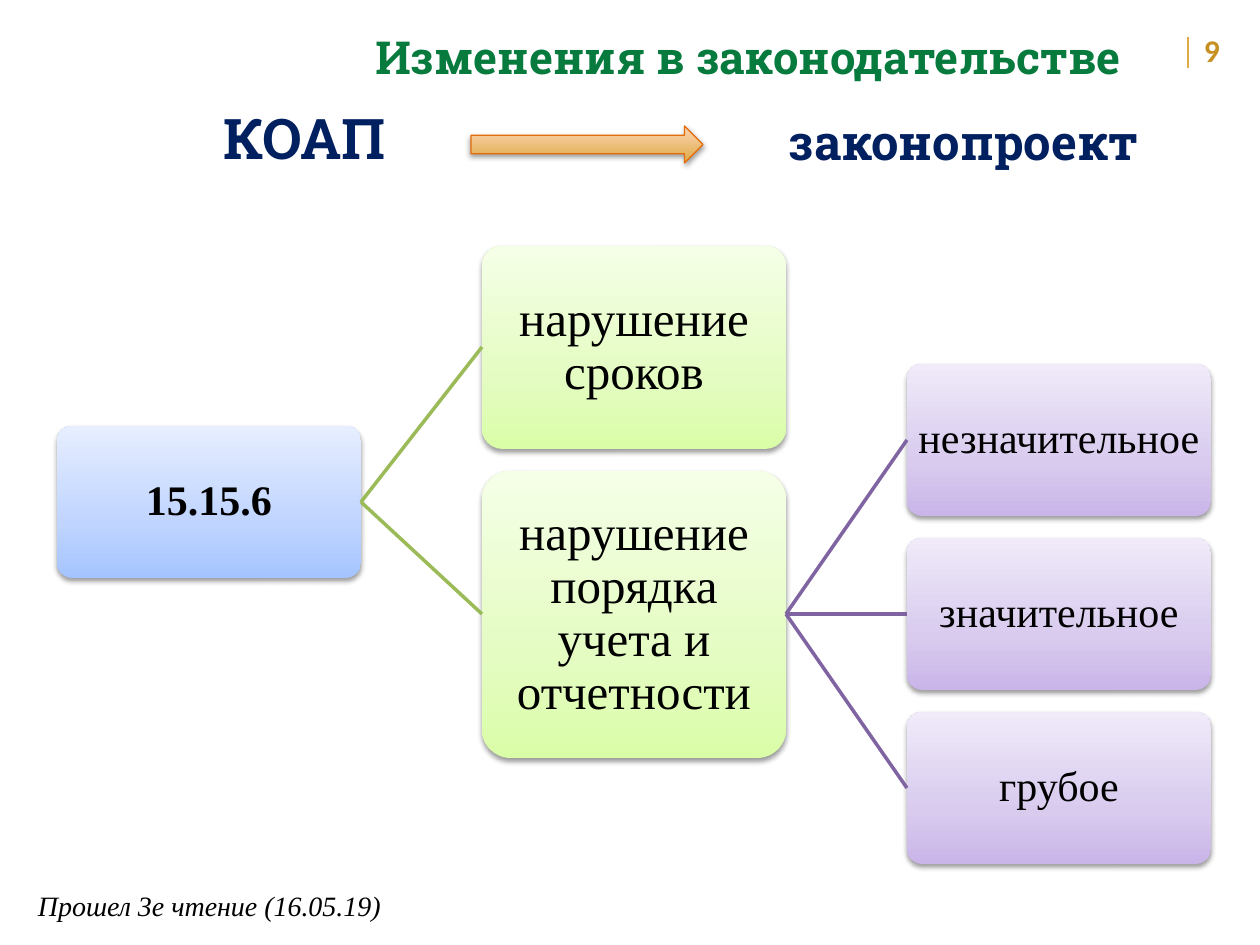
"""Build a slide on legal changes with a three-level tree of offences."""
from dataclasses import dataclass

from lxml import etree
from pptx import Presentation
from pptx.dml.color import RGBColor
from pptx.enum.shapes import MSO_CONNECTOR, MSO_SHAPE
from pptx.enum.text import MSO_ANCHOR, MSO_AUTO_SIZE, PP_ALIGN
from pptx.oxml.ns import qn
from pptx.util import Emu, Pt

STRAIGHT = MSO_CONNECTOR.STRAIGHT
ROUND_RECT, RIGHT_ARROW = MSO_SHAPE.ROUNDED_RECTANGLE, MSO_SHAPE.RIGHT_ARROW
TOP, MIDDLE = MSO_ANCHOR.TOP, MSO_ANCHOR.MIDDLE
LEFT, CENTER = PP_ALIGN.LEFT, PP_ALIGN.CENTER
NO_FIT = MSO_AUTO_SIZE.NONE

EMU_PER_PX = 914400 / 126
SLAB, TIMES, CALIBRI = "Roboto Slab", "Times New Roman", "Calibri"
COLORS = {
    "title": "077A3E", "heading": "002060", "text": "000000",
    "number": "C79023", "gold": "DEAA46", "sand": "FCD5B5", "orange": "E46C0A",
    "green_line": "9BBB59", "purple_line": "8064A2",
}
BLUE = ((0, "A4C4FF"), (35, "BFD4FF"), (100, "E6EEFF"))
GREEN = ((0, "DAFDA7"), (35, "E4FCC2"), (100, "F5FFE7"))
PURPLE = ((0, "C9B5E8"), (35, "D8CBEE"), (100, "F0EAF9"))
SAND = ((0, COLORS["gold"]), (100, COLORS["sand"]))
TREE_LEFT, ROOT_TOP = 57, 426
CARD_W, CARD_H = 304, 152
COLUMN_GAP, ROW_GAP = 121, 22


@dataclass(frozen=True)
class Style:
    font: str
    size: int
    color: str
    bold: bool = False
    italic: bool = False
    align: PP_ALIGN = CENTER
    anchor: MSO_ANCHOR = MIDDLE


@dataclass(frozen=True)
class Label:
    text: str
    box: tuple[int, int, int, int]
    style: Style
    indent: int = 0
    inset: int = 13


@dataclass(frozen=True)
class Card:
    text: str
    size: int
    height: int = CARD_H
    bold: bool = False


@dataclass(frozen=True)
class Node:
    x: int
    y: int
    height: int

    @property
    def mid(self) -> int:
        return self.y + self.height // 2


TITLE = Label("Изменения в законодательстве", (272, 23, 890, 68),
              Style(SLAB, 26, "title", bold=True, anchor=TOP), 63)
LABELS = (
    Label("9", (1184, 25, 53, 50),
          Style(CALIBRI, 18, "number", bold=True, align=LEFT, anchor=TOP), inset=20),
    Label("КОАП", (25, 97, 495, 81), Style(SLAB, 32, "heading", bold=True), 63),
    Label("законопроект", (752, 105, 415, 72), Style(SLAB, 28, "heading", bold=True), 8),
    Label("Прошел 3е чтение (16.05.19)", (25, 882, 373, 52),
          Style(TIMES, 16, "text", italic=True, align=LEFT, anchor=TOP)),
)
ROOT = Card("15.15.6", 24, bold=True)
OFFENCES = (Card("нарушение сроков", 28, 203),
            Card("нарушение порядка учета и отчетности", 28, 287))
DEGREES = (Card("незначительное", 24), Card("значительное", 24), Card("грубое", 24))


def px(n: int) -> Emu:
    """Turn pixels into EMU."""
    return Emu(round(n * EMU_PER_PX))


def rgb(name: str) -> RGBColor:
    """Look up a colour."""
    return RGBColor.from_string(COLORS[name])


def write(sp, text: str, style: Style, inset: int = 13, indent: int = 0) -> None:
    """Set the text of a shape and format it."""
    tf = sp.text_frame
    tf.text = text
    tf.word_wrap = True
    tf.auto_size = NO_FIT
    tf.vertical_anchor = style.anchor
    tf.margin_left = px(inset)
    p = tf.paragraphs[0]
    p.alignment = style.align
    p._p.get_or_add_pPr().set("marL", str(px(indent)))
    font = p.runs[0].font
    font.name, font.size = style.font, Pt(style.size)
    font.bold, font.italic = style.bold, style.italic
    font.color.rgb = rgb(style.color)


def add_label(slide, label: Label) -> None:
    """Add a text box."""
    sp = slide.shapes.add_textbox(*map(px, label.box))
    write(sp, label.text, label.style, label.inset, label.indent)


def add_block(slide, kind: MSO_SHAPE, box: tuple[int, int, int, int], stops: tuple):
    """Add a shape with a bottom-up gradient and a soft shadow."""
    sp = slide.shapes.add_shape(kind, *map(px, box))
    sp.fill.gradient()
    sp.fill.gradient_angle = 90
    sp.line.fill.background()
    sp.shadow.inherit = False
    spPr = sp._element.spPr
    stop_list = spPr.find(qn("a:gradFill")).find(qn("a:gsLst"))
    for old in list(stop_list):
        stop_list.remove(old)
    for pos, color in stops:
        stop = etree.SubElement(stop_list, qn("a:gs"), pos=str(pos * 1000))
        etree.SubElement(stop, qn("a:srgbClr"), val=color)
    shadow = etree.SubElement(spPr.find(qn("a:effectLst")), qn("a:outerShdw"),
                              blurRad=str(Pt(3.1)), dist=str(Pt(1.6)),
                              dir="5400000", rotWithShape="0")
    color = etree.SubElement(shadow, qn("a:srgbClr"), val=COLORS["text"])
    etree.SubElement(color, qn("a:alpha"), val="38000")
    return sp


def add_line(slide, start: tuple[int, int], end: tuple[int, int],
             color: str, width: int) -> None:
    """Add a straight line without a shadow."""
    line = slide.shapes.add_connector(STRAIGHT, *map(px, start + end))
    line.line.color.rgb = rgb(color)
    line.line.width = Pt(width)
    etree.SubElement(line._element.spPr, qn("a:effectLst"))


def add_card(slide, card: Card, x: int, y: int, stops: tuple) -> Node:
    """Add one card of the tree."""
    sp = add_block(slide, ROUND_RECT, (x, y, CARD_W, card.height), stops)
    sp.adjustments[0] = 0.1
    write(sp, card.text, Style(TIMES, card.size, "text", card.bold), inset=2)
    tf = sp.text_frame
    tf.margin_right = tf.margin_top = tf.margin_bottom = px(2)
    tf.paragraphs[0].line_spacing = 0.9
    return Node(x, y, card.height)


def add_children(slide, parent: Node, cards: tuple[Card, ...],
                 stops: tuple, color: str) -> list[Node]:
    """Stack cards centred beside their parent and join them to it."""
    edge = parent.x + CARD_W
    x = edge + COLUMN_GAP
    total = sum(c.height for c in cards) + ROW_GAP * (len(cards) - 1)
    y = parent.mid - total // 2
    nodes = []
    for card in cards:
        node = add_card(slide, card, x, y, stops)
        add_line(slide, (edge, parent.mid), (x, node.mid), color, 2)
        nodes.append(node)
        y += card.height + ROW_GAP
    return nodes


def main() -> None:
    """Build and save the slide."""
    prs = Presentation()
    prs.slide_width, prs.slide_height = px(1260), px(945)
    slide = prs.slides.add_slide(prs.slide_layouts[5])
    title = slide.shapes.title
    title.left, title.top, title.width, title.height = map(px, TITLE.box)
    write(title, TITLE.text, TITLE.style, TITLE.inset, TITLE.indent)
    for label in LABELS:
        add_label(slide, label)
    add_line(slide, (1188, 37), (1188, 68), "gold", 1)
    arrow = add_block(slide, RIGHT_ARROW, (471, 126, 232, 37), SAND)
    arrow.line.color.rgb = rgb("orange")
    arrow.line.width = Pt(0.75)
    root = add_card(slide, ROOT, TREE_LEFT, ROOT_TOP, BLUE)
    offences = add_children(slide, root, OFFENCES, GREEN, "green_line")
    add_children(slide, offences[-1], DEGREES, PURPLE, "purple_line")
    prs.save("out.pptx")


if __name__ == "__main__":
    main()
